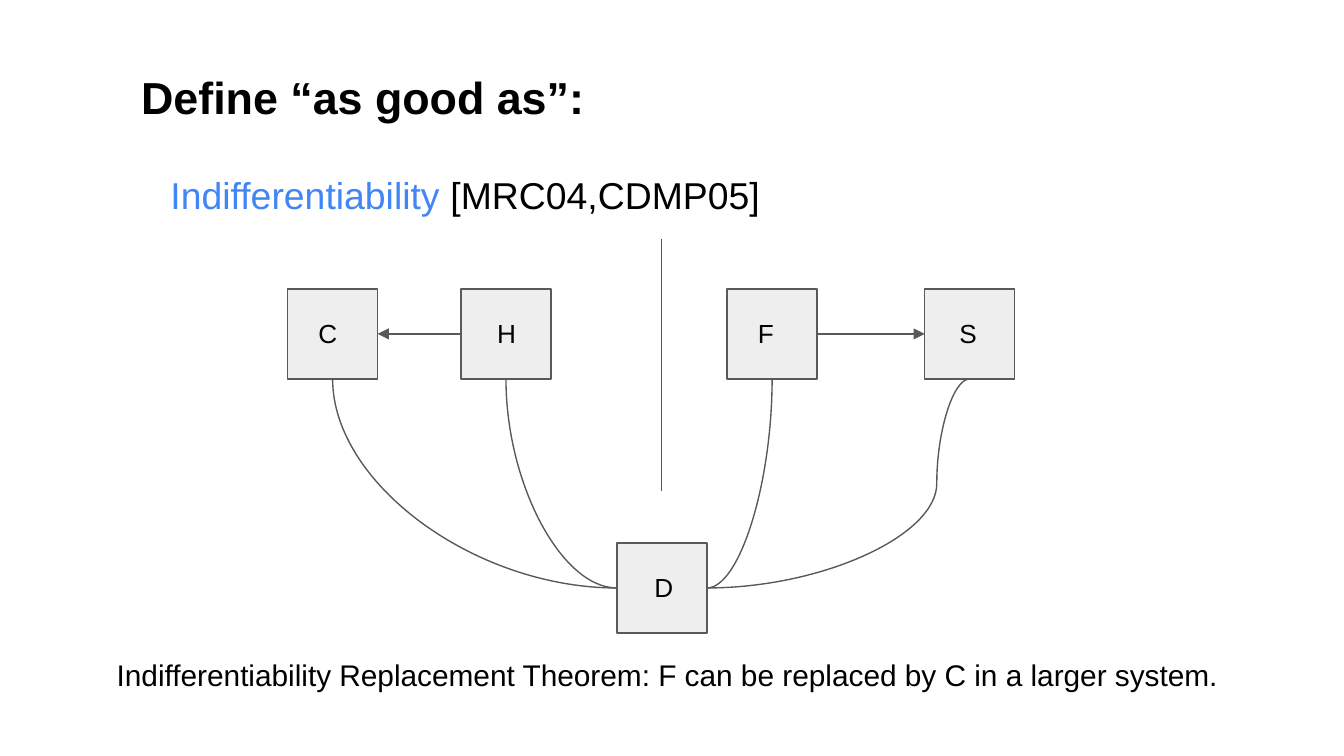
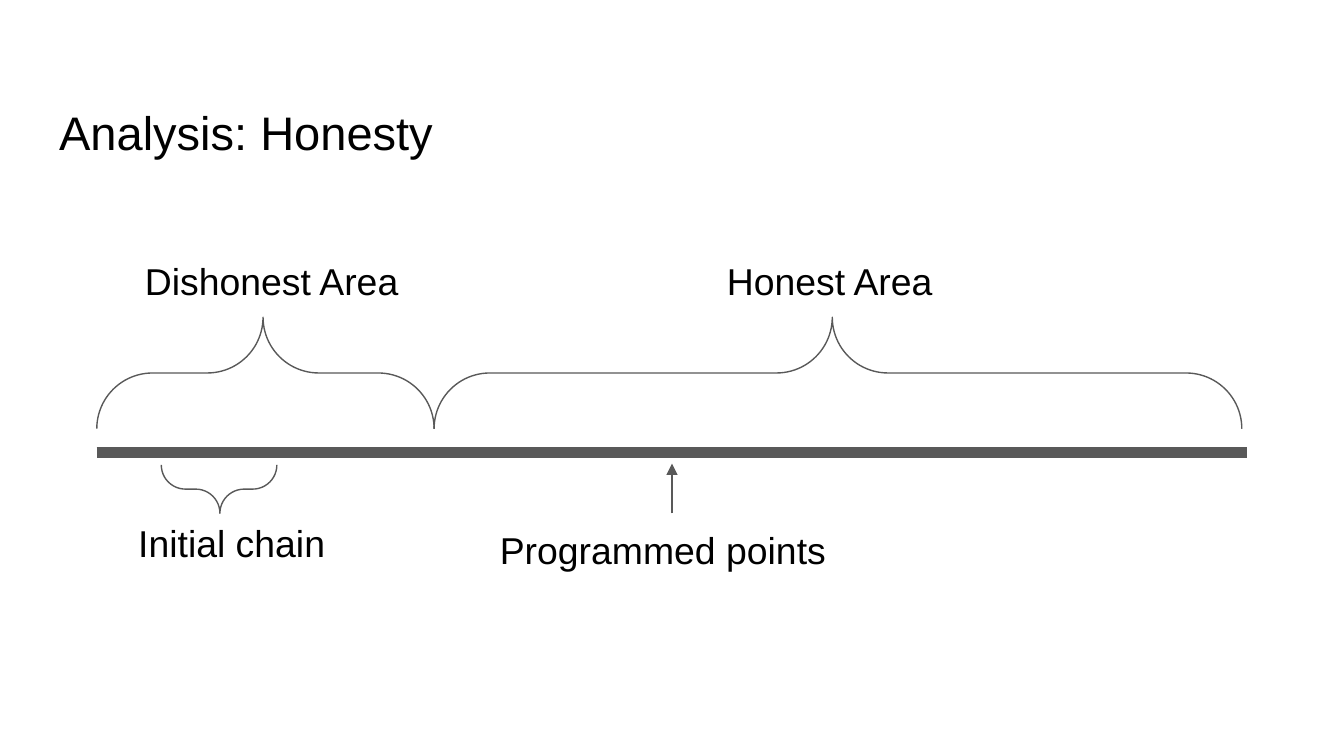
"""Build two slides: indifferentiability diagram and honesty analysis."""
from dataclasses import dataclass

from pptx import Presentation
from pptx.dml.color import RGBColor
from pptx.enum.shapes import MSO_CONNECTOR, MSO_SHAPE
from pptx.enum.text import MSO_ANCHOR, MSO_AUTO_SIZE, PP_ALIGN
from pptx.oxml.ns import qn
from pptx.oxml.xmlchemy import OxmlElement
from pptx.util import Inches, Pt

STRAIGHT, CURVE = MSO_CONNECTOR.STRAIGHT, MSO_CONNECTOR.CURVE
RECTANGLE, BRACE = MSO_SHAPE.RECTANGLE, MSO_SHAPE.RIGHT_BRACE
TOP, LEFT = MSO_ANCHOR.TOP, PP_ALIGN.LEFT
GROW, FIXED = MSO_AUTO_SIZE.SHAPE_TO_FIT_TEXT, MSO_AUTO_SIZE.NONE
LEFT_SIDE, RIGHT_SIDE = 1, 3
TITLE_ONLY = 5
COLUMNS, ROWS = 100, 56.25
NODE = 6.7


@dataclass(frozen=True)
class Theme:
    """Colours, font and sizes shared by the slides."""
    font: str = "Arial"
    ink: str = "000000"
    accent: str = "4285F4"
    stroke: str = "595959"
    node: str = "EEEEEE"
    title: float = 25.2
    heading: float = 24
    body: float = 20
    theorem: float = 16
    letter: float = 14
    thin: float = 0.75
    thick: float = 6


THEME = Theme()


def grid(*cells):
    """Turn grid columns or rows, a tenth of an inch each, into lengths."""
    return [Inches(cell / 10) for cell in cells]


def write(frame, text, size=THEME.body, color=THEME.ink, bold=False,
          inset=1.0, auto_size=GROW):
    """Append a formatted run to the first paragraph of a text frame."""
    frame.word_wrap = True
    frame.auto_size = auto_size
    frame.vertical_anchor = TOP
    frame.margin_left, frame.margin_right = grid(1, 1)
    frame.margin_top, frame.margin_bottom = grid(inset, inset)
    paragraph = frame.paragraphs[0]
    paragraph.alignment = LEFT
    run = paragraph.add_run()
    run.text = text
    run.font.name = THEME.font
    run.font.size = Pt(size)
    run.font.bold = bold
    run.font.color.rgb = RGBColor.from_string(color)


def add_label(slide, place, text, **style):
    """Add a text box at a grid place and return its frame."""
    frame = slide.shapes.add_textbox(*grid(*place)).text_frame
    write(frame, text, **style)
    return frame


def add_titled_slide(deck, place, text, **style):
    """Add a slide with its title moved to a grid place."""
    slide = deck.slides.add_slide(deck.slide_layouts[TITLE_ONLY])
    title = slide.shapes.title
    title.left, title.top, title.width, title.height = grid(*place)
    write(title.text_frame, text, **style)
    return slide


def stroke(line, width=THEME.thin):
    """Give a line the shared colour and a width."""
    line.color.rgb = RGBColor.from_string(THEME.stroke)
    line.width = Pt(width)


def add_line(slide, start, end, kind=STRAIGHT, width=THEME.thin, arrow=False):
    """Add a connector between two grid points."""
    link = slide.shapes.add_connector(kind, *grid(*start, *end))
    stroke(link.line, width)
    if arrow:
        head = OxmlElement("a:tailEnd")
        head.set("type", "triangle")
        link.line._get_or_add_ln().append(head)
    link._element.spPr.append(OxmlElement("a:effectLst"))
    return link


def add_quarter_curve(slide, start, end):
    """Curve from a node's bottom down and sideways to the end point."""
    (x0, y0), (x1, y1) = start, end
    run, drop = abs(x1 - x0), y1 - y0
    link = add_line(slide, start, end, CURVE)
    link.left, link.top, link.width, link.height = grid(
        (x0 + x1 - drop) / 2, (y0 + y1 - run) / 2, drop, run)
    rightward = x1 > x0
    frame = link._element.spPr.find(qn("a:xfrm"))
    frame.set("rot", str((270 if rightward else 90) * 60000))
    frame.set("flipH", "1" if rightward else "0")
    link._element.spPr.find(qn("a:prstGeom")).set("prst", "curvedConnector2")


def add_s_curve(slide, start, end, bend):
    """Curve between two points, turning at a share of the way."""
    link = add_line(slide, start, end, CURVE)
    geometry = link._element.spPr.find(qn("a:prstGeom"))
    values = geometry.find(qn("a:avLst"))
    if values is None:
        values = OxmlElement("a:avLst")
        geometry.append(values)
    guide = OxmlElement("a:gd")
    guide.set("name", "adj1")
    guide.set("fmla", f"val {round(bend * 100000)}")
    values.append(guide)


def add_node(slide, letter, left, top, indent):
    """Add a square node with its letter."""
    node = slide.shapes.add_shape(RECTANGLE, *grid(left, top, NODE, NODE))
    node.shadow.inherit = False
    node.fill.solid()
    node.fill.fore_color.rgb = RGBColor.from_string(THEME.node)
    stroke(node.line)
    add_label(slide, (left + indent, top + 1.1, 4, 4.4), letter,
              size=THEME.letter)
    return node


def add_brace(slide, left, right, top, depth, rotation):
    """Add a horizontal brace spanning two columns."""
    span = right - left
    brace = slide.shapes.add_shape(BRACE, *grid(
        (left + right - depth) / 2, top + (depth - span) / 2, depth, span))
    brace.rotation = rotation
    brace.adjustments[0], brace.adjustments[1] = 0.5, 0.493
    brace.shadow.inherit = False
    brace.fill.background()
    stroke(brace.line)


def build_definition(deck):
    """Show the indifferentiability diagram and theorem."""
    slide = add_titled_slide(deck, (9.5, 4.7, 47.7, 5), "Define “as good as”:",
                             size=THEME.heading, bold=True, inset=0.5)
    notion = add_label(slide, (11.7, 11.8, 71.6, 5.3), "Indifferentiability",
                       color=THEME.accent)
    write(notion, " [MRC04,CDMP05]")
    add_line(slide, (49.2, 17.8), (49.2, 36.5))

    system_top, distinguisher_left, distinguisher_top = 21.5, 45.9, 40.4
    systems = {"C": (21.4, 1.3), "H": (34.3, 1.7),
               "F": (54.1, 1.3), "S": (68.8, 1.6)}
    nodes = {letter: add_node(slide, letter, left, system_top, indent)
             for letter, (left, indent) in systems.items()}
    add_node(slide, "D", distinguisher_left, distinguisher_top, 1.8)

    bottoms = {letter: (left + NODE / 2, system_top + NODE)
               for letter, (left, _) in systems.items()}
    middle = distinguisher_top + NODE / 2
    left_end = (distinguisher_left, middle)
    right_end = (distinguisher_left + NODE, middle)
    for letter, end in (("H", left_end), ("C", left_end), ("F", right_end)):
        add_quarter_curve(slide, bottoms[letter], end)
    add_s_curve(slide, bottoms["S"], right_end, 0.125)

    for caller, side, callee, far_side in (("H", LEFT_SIDE, "C", RIGHT_SIDE),
                                           ("F", RIGHT_SIDE, "S", LEFT_SIDE)):
        query = add_line(slide, bottoms[caller], bottoms[callee], arrow=True)
        query.begin_connect(nodes[caller], side)
        query.end_connect(nodes[callee], far_side)

    add_label(slide, (7.7, 48.4, 96.6, 3.7),
              "Indifferentiability Replacement Theorem: "
              "F can be replaced by C in a larger system.",
              size=THEME.theorem, inset=0.5)


def build_honesty(deck):
    """Show the honest and dishonest areas along the chain."""
    slide = add_titled_slide(deck, (3.4, 6.7, 93.2, 6.3), "Analysis: Honesty",
                             size=THEME.title, auto_size=FIXED)
    add_line(slide, (7.2, 33.7), (92.8, 33.7), width=THEME.thick)
    for left, right, top, depth, rotation in ((7.2, 32.3, 23.6, 8.3, 270),
                                              (32.3, 92.4, 23.6, 8.3, 270),
                                              (12, 20.6, 34.6, 3.6, 90)):
        add_brace(slide, left, right, top, depth, rotation)
    add_line(slide, (50, 38.2), (50, 34.5), arrow=True)
    for text, left, top, width in (("Dishonest Area", 9.8, 18.2, 25.4),
                                   ("Honest Area", 53.1, 18.2, 25.4),
                                   ("Initial chain", 9.3, 37.7, 15.9),
                                   ("Programmed points", 36.2, 38.2, 31.5)):
        add_label(slide, (left, top, width, 5.4), text)


def main():
    """Build and save the deck."""
    deck = Presentation()
    deck.slide_width, deck.slide_height = grid(COLUMNS, ROWS)
    build_definition(deck)
    build_honesty(deck)
    deck.save("out.pptx")


if __name__ == "__main__":
    main()
